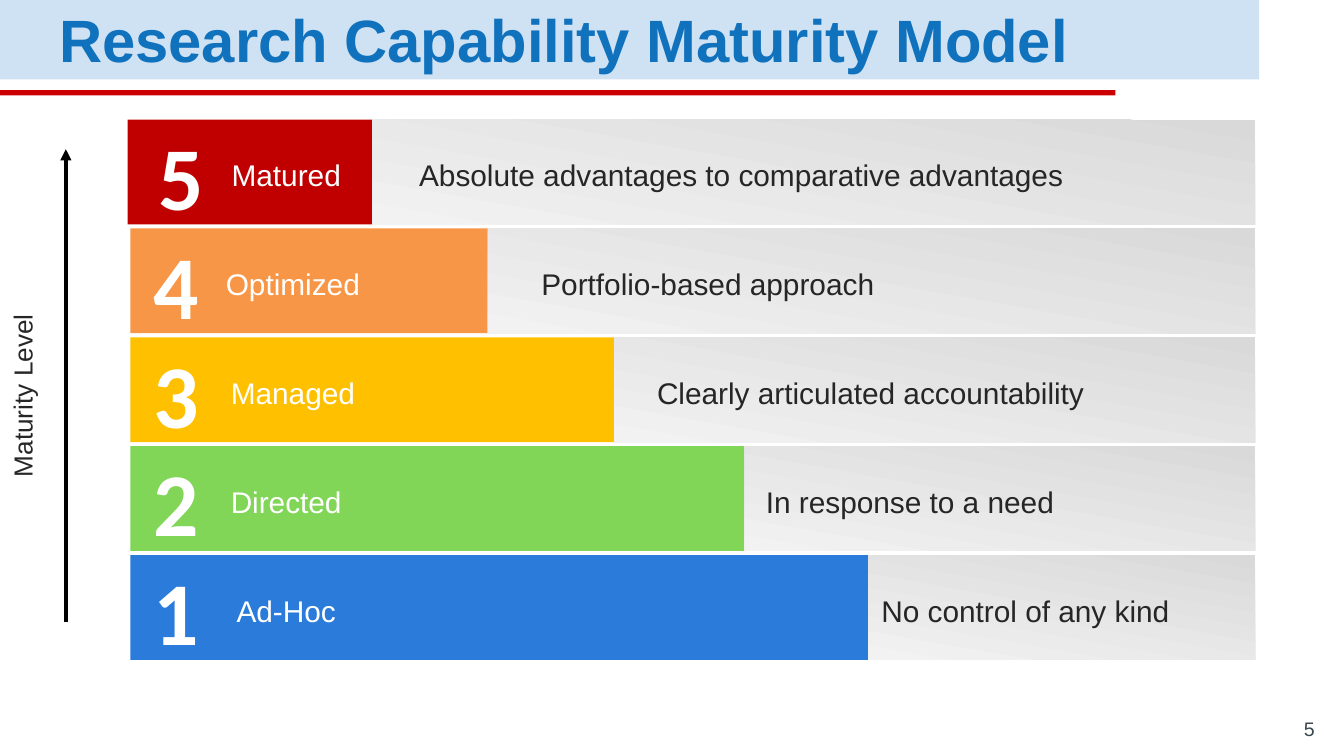
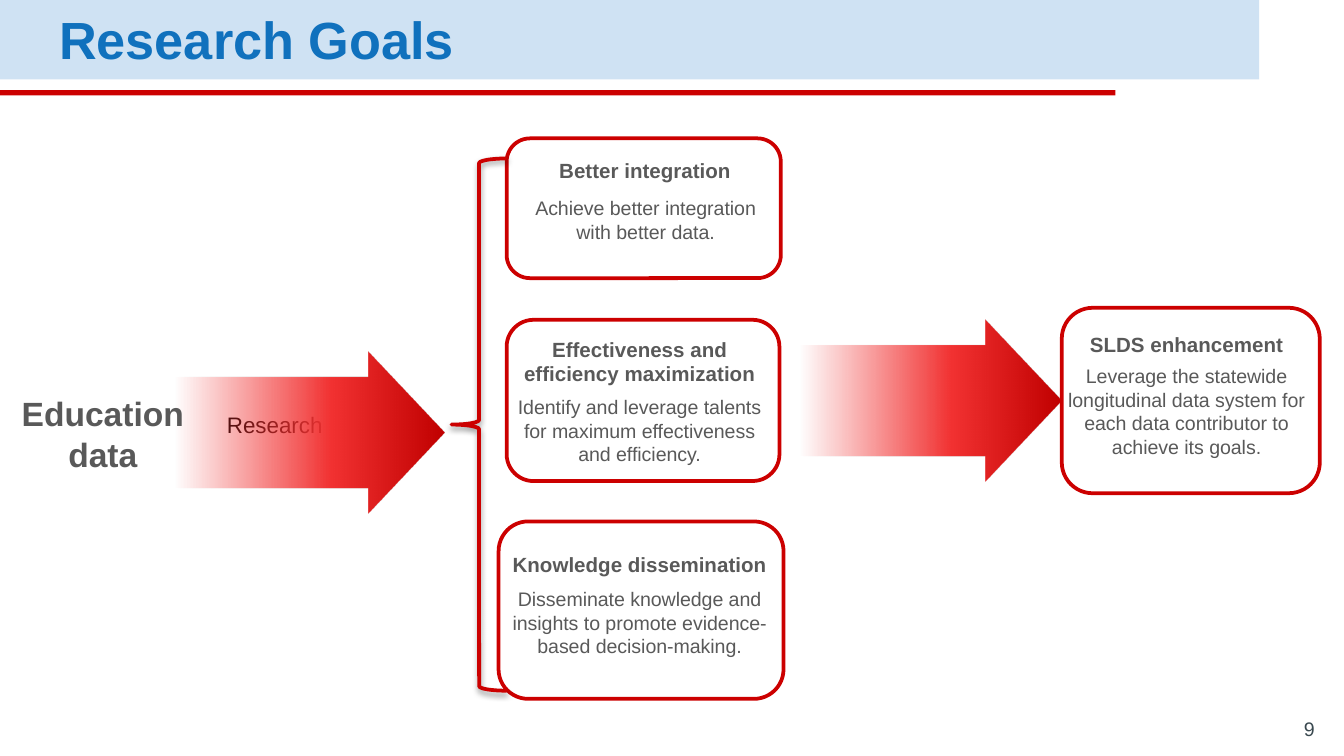
from dataclasses import dataclass

from lxml import etree
from pptx import Presentation
from pptx.dml.color import RGBColor
from pptx.enum.shapes import MSO_CONNECTOR, MSO_SHAPE
from pptx.enum.text import MSO_ANCHOR, PP_ALIGN
from pptx.oxml.ns import qn
from pptx.shapes.autoshape import Shape
from pptx.slide import Slide
from pptx.util import Inches, Pt

RECTANGLE = MSO_SHAPE.RECTANGLE
ROUNDED = MSO_SHAPE.ROUNDED_RECTANGLE
LEFT_BRACE = MSO_SHAPE.LEFT_BRACE
STRAIGHT = MSO_CONNECTOR.STRAIGHT
LEFT, CENTER, RIGHT = PP_ALIGN.LEFT, PP_ALIGN.CENTER, PP_ALIGN.RIGHT
TOP, MIDDLE, BOTTOM = MSO_ANCHOR.TOP, MSO_ANCHOR.MIDDLE, MSO_ANCHOR.BOTTOM
TITLE_ONLY = 5

COLORS = {
    "band": "CFE2F3", "red": "CC0000", "title": "1071BD", "number": "3A4950",
    "dark": "262626", "gray": "595959", "black": "000000", "white": "FFFFFF",
    "matured": "C00000", "optimized": "F79646", "managed": "FFC000",
    "directed": "81D557", "ad_hoc": "2B7BDB",
    "silver": "D9D9D9", "pale": "F2F2F2", "bright_red": "F23232", "deep_red": "C00000",
}


@dataclass(frozen=True)
class Area:
    left: float
    top: float
    width: float
    height: float

    def emu(self) -> tuple[int, ...]:
        return tuple(Inches(v) for v in (self.left, self.top, self.width, self.height))


@dataclass(frozen=True)
class Style:
    size: float
    color: str
    bold: bool = False
    align: PP_ALIGN = LEFT
    anchor: MSO_ANCHOR = TOP
    inset: float = 0.05
    font: str = "Arial"


@dataclass(frozen=True)
class Stop:
    position: int
    color: str
    alpha: int = 100


@dataclass(frozen=True)
class Level:
    number: str
    name: str
    description: str
    color: str
    split: float
    description_left: float
    left: float = 0.97
    number_center: float = 1.31
    name_center: float = 2.13


@dataclass(frozen=True)
class Goal:
    heading: str
    body: str
    outline: Area
    heading_area: Area
    body_area: Area


PAGE_NUMBER = Style(10.5, "number", align=RIGHT, anchor=BOTTOM, inset=0.1)
LEVEL_NUMBER = Style(48, "white", bold=True, align=CENTER, font="Calibri")
LEVEL_NAME = Style(16, "white", align=CENTER)
LEVEL_TEXT = Style(16, "dark")
GOAL_HEADING = Style(11, "gray", True, CENTER, MIDDLE)
GOAL_BODY = Style(10.5, "gray", align=CENTER, inset=0)
INPUT_LABEL = Style(18, "gray", True, CENTER, MIDDLE)

ROW_TOP, ROW_PITCH, ROW_HEIGHT, ROW_RIGHT = 0.89, 0.81, 0.78, 9.34
LEVELS = [
    Level("5", "Matured", "Absolute advantages to comparative advantages",
          "matured", 2.77, 3.02, left=0.95, number_center=1.35),
    Level("4", "Optimized", "Portfolio-based approach",
          "optimized", 3.63, 3.93, name_center=2.18),
    Level("3", "Managed", "Clearly articulated accountability",
          "managed", 4.57, 4.79, name_center=2.18),
    Level("2", "Directed", "In response to a need", "directed", 5.54, 5.6),
    Level("1", "Ad-Hoc", "No control of any kind", "ad_hoc", 6.46, 6.46),
]
ROW_FADE = [Stop(0, "silver"), Stop(100, "pale")]

GOALS = [
    Goal("Better integration", "Achieve better integration with better data.",
         Area(3.77, 1.03, 2.04, 1.04), Area(3.71, 1.18, 2.18, 0.18),
         Area(3.85, 1.46, 1.91, 0.4)),
    Goal("Effectiveness and efficiency maximization",
         "Identify and leverage talents for maximum effectiveness and efficiency.",
         Area(3.77, 2.38, 2.03, 1.2), Area(3.71, 2.56, 2.1, 0.26),
         Area(3.71, 2.94, 2.1, 0.63)),
    Goal("Knowledge dissemination",
         "Disseminate knowledge and insights to promote evidence-based decision-making.",
         Area(3.71, 3.88, 2.12, 1.32), Area(3.71, 4.07, 2.1, 0.26),
         Area(3.7, 4.37, 2.12, 0.63)),
    Goal("SLDS enhancement",
         "Leverage the statewide longitudinal data system for each data contributor "
         "to achieve its goals.",
         Area(7.9, 2.29, 1.92, 1.38), Area(7.78, 2.43, 2.1, 0.26),
         Area(7.78, 2.71, 2.1, 0.63)),
]
ARROW_FADE = [Stop(0, "bright_red", 0), Stop(58, "bright_red"), Stop(100, "deep_red")]
ARROW_HEAD, ARROW_SHOULDER = 0.57, 0.19


def rgb(name: str) -> RGBColor:
    return RGBColor.from_string(COLORS[name])


def write_text(box: Shape, text: str, style: Style) -> None:
    frame = box.text_frame
    frame.word_wrap = True
    frame.vertical_anchor = style.anchor
    frame.margin_left = frame.margin_right = Inches(0.1)
    frame.margin_top = frame.margin_bottom = Inches(style.inset)
    frame.text = text
    para = frame.paragraphs[0]
    para.alignment = style.align
    font = para.font
    font.name, font.size, font.bold = style.font, Pt(style.size), style.bold
    font.color.rgb = rgb(style.color)


def add_text(page: Slide, area: Area, text: str, style: Style) -> Shape:
    box = page.shapes.add_textbox(*area.emu())
    write_text(box, text, style)
    return box


def add_block(page: Slide, area: Area, color: str) -> Shape:
    block = page.shapes.add_shape(RECTANGLE, *area.emu())
    block.shadow.inherit = False
    block.fill.solid()
    block.fill.fore_color.rgb = rgb(color)
    block.line.fill.background()
    return block


def add_outline(page: Slide, kind: MSO_SHAPE, area: Area) -> Shape:
    outline = page.shapes.add_shape(kind, *area.emu())
    outline.shadow.inherit = False
    outline.fill.background()
    outline.line.color.rgb = rgb("red")
    outline.line.width = Pt(2)
    return outline


def add_color(parent: etree._Element, name: str, alpha: int) -> None:
    color = etree.SubElement(parent, qn("a:srgbClr"), val=COLORS[name])
    if alpha < 100:
        etree.SubElement(color, qn("a:alpha"), val=str(alpha * 1000))


def fill_gradient(shape: Shape, stops: list[Stop], angle: int) -> None:
    """Give the shape a linear gradient; the angle is in clockwise degrees."""
    shape.fill.background()
    properties = shape.element.spPr
    gradient = etree.Element(qn("a:gradFill"), rotWithShape="1")
    stop_list = etree.SubElement(gradient, qn("a:gsLst"))
    for stop in stops:
        entry = etree.SubElement(stop_list, qn("a:gs"), pos=str(stop.position * 1000))
        add_color(entry, stop.color, stop.alpha)
    etree.SubElement(gradient, qn("a:lin"), ang=str(angle * 60000), scaled="0")
    properties.replace(properties.find(qn("a:noFill")), gradient)


def add_soft_shadow(shape: Shape) -> None:
    effects = shape.element.spPr.find(qn("a:effectLst"))
    shadow = etree.SubElement(
        effects, qn("a:outerShdw"), blurRad=str(Pt(3.1)), dist=str(Pt(1.6)),
        dir=str(90 * 60000), rotWithShape="0")
    add_color(shadow, "black", 38)


def add_block_arrow(page: Slide, area: Area) -> None:
    right, bottom = area.left + area.width, area.top + area.height
    neck = right - ARROW_HEAD
    upper, lower = area.top + ARROW_SHOULDER, bottom - ARROW_SHOULDER
    corners = [(neck, area.top), (right, area.top + area.height / 2), (neck, bottom),
               (neck, lower), (area.left, lower), (area.left, upper), (neck, upper)]
    points = [(Inches(x), Inches(y)) for x, y in corners]
    builder = page.shapes.build_freeform(*points[0])
    builder.add_line_segments(points[1:], close=True)
    arrow = builder.convert_to_shape()
    arrow.shadow.inherit = False
    arrow.line.fill.background()
    fill_gradient(arrow, ARROW_FADE, 0)


def add_page(deck: Presentation, title: str, title_size: int, number: str) -> Slide:
    """Add a slide with the header band, red rule, title and page number."""
    page = deck.slides.add_slide(deck.slide_layouts[TITLE_ONLY])
    add_block(page, Area(0, 0, 9.37, 0.59), "band")
    add_block(page, Area(0, 0.67, 8.3, 0.04), "red")
    heading = page.shapes.title
    heading.left, heading.top, heading.width, heading.height = Area(
        0.34, 0.04, 9.03, 0.49).emu()
    write_text(heading, title, Style(title_size, "title", bold=True, anchor=MIDDLE))
    page.shapes.element.append(heading.element)  # in front of the band
    add_text(page, Area(9.28, 5.34, 0.6, 0.26), number, PAGE_NUMBER)
    return page


def add_level(page: Slide, level: Level, top: float) -> None:
    add_block(page, Area(level.left, top, level.split - level.left, ROW_HEIGHT), level.color)
    bar = add_block(page, Area(level.split, top, ROW_RIGHT - level.split, ROW_HEIGHT), "pale")
    fill_gradient(bar, ROW_FADE, 100)
    add_text(page, Area(level.number_center - 0.28, top - 0.04, 0.56, 0.91),
             level.number, LEVEL_NUMBER)
    add_text(page, Area(level.name_center - 0.6, top + 0.23, 1.2, 0.37),
             level.name, LEVEL_NAME)
    add_text(page, Area(level.description_left, top + 0.23,
                        ROW_RIGHT - level.description_left, 0.37),
             level.description, LEVEL_TEXT)


def add_axis(page: Slide) -> None:
    label = add_text(page, Area(0, 1.84, 0.44, 1.81), "Maturity Level", Style(14, "dark"))
    label.element.txBody.bodyPr.set("vert", "vert270")
    axis = page.shapes.add_connector(
        STRAIGHT, Inches(0.49), Inches(4.63), Inches(0.49), Inches(1.11))
    axis.line.color.rgb = rgb("black")
    axis.line.width = Pt(2)
    properties = axis.element.spPr
    etree.SubElement(properties.find(qn("a:ln")), qn("a:tailEnd"), type="triangle")
    etree.SubElement(properties, qn("a:effectLst"))


def build_maturity_model(deck: Presentation) -> None:
    page = add_page(deck, "Research Capability Maturity Model", 32, "5")
    add_axis(page)
    for row, level in enumerate(LEVELS):
        add_level(page, level, ROW_TOP + row * ROW_PITCH)


def build_goals(deck: Presentation) -> None:
    page = add_page(deck, "Research Goals", 28, "9")
    add_block_arrow(page, Area(5.96, 2.38, 1.94, 1.2))
    for goal in GOALS:
        add_text(page, goal.body_area, goal.body, GOAL_BODY)
        add_text(page, goal.heading_area, goal.heading, GOAL_HEADING)
        add_outline(page, ROUNDED, goal.outline)
    add_soft_shadow(add_outline(page, LEFT_BRACE, Area(3.36, 1.18, 0.41, 3.96)))
    add_text(page, Area(1.59, 3.01, 1.13, 0.3), "Research", Style(12, "black"))
    add_block_arrow(page, Area(1.31, 2.62, 2, 1.2))
    add_text(page, Area(-0.06, 2.98, 1.65, 0.49), "Education data", INPUT_LABEL)


def main() -> None:
    deck = Presentation()
    deck.slide_width = Inches(10)
    deck.slide_height = deck.slide_width * 9 // 16
    build_maturity_model(deck)
    build_goals(deck)
    deck.save("out.pptx")


if __name__ == "__main__":
    main()
